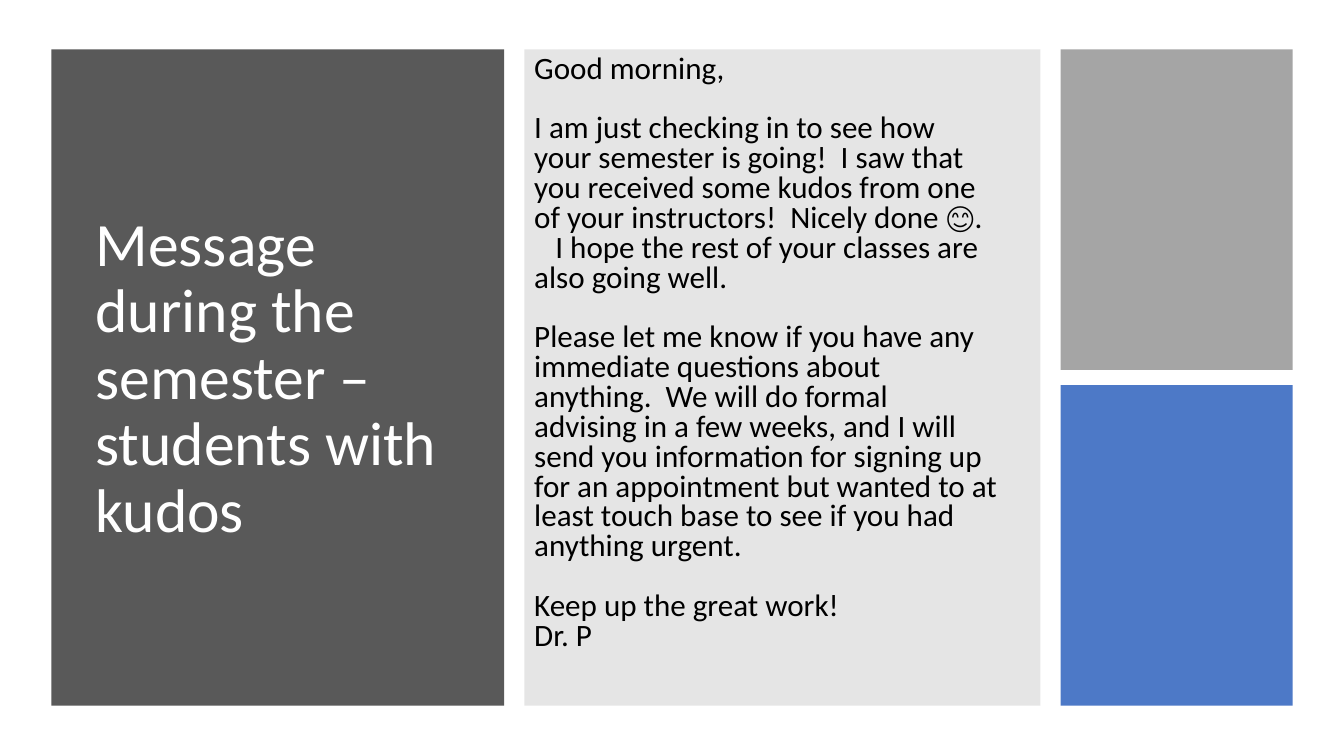
from dataclasses import dataclass
from itertools import accumulate

from lxml.etree import SubElement
from pptx import Presentation
from pptx.dml.color import RGBColor
from pptx.enum.shapes import MSO_SHAPE
from pptx.enum.text import MSO_ANCHOR
from pptx.oxml.ns import qn
from pptx.slide import Slide
from pptx.util import Inches, Pt


@dataclass(frozen=True)
class Theme:
    font: str = "Calibri"
    emoji_font: str = "Lato"
    dark: str = "595959"
    grey: str = "808080"
    silver: str = "A5A5A5"
    blue: str = "4472C4"
    white: str = "FFFFFF"
    black: str = "000000"
    title_size: float = 44
    body_size: float = 22.2
    blank_line: float = 21.35


@dataclass(frozen=True)
class Area:
    left: float
    top: float
    width: float
    height: float

    def emu(self) -> list[int]:
        return [Inches(n) for n in (self.left, self.top, self.width, self.height)]


@dataclass(frozen=True)
class Panel:
    column: int
    row: int
    row_span: int
    color: str
    opacity: int = 100


@dataclass(frozen=True)
class Paragraph:
    spans: tuple[str, ...]
    gap_before: float = 0
    indent: float = 0


@dataclass(frozen=True)
class TextBlock:
    area: Area
    paragraphs: tuple[Paragraph, ...]
    size: float
    color: str
    line_spacing: float
    anchor: MSO_ANCHOR


THEME = Theme()
EMOJI = "😊"

# Grid: three columns, two equal rows
LEFT, TOP, HEIGHT = 0.51, 0.49, 6.51
WIDTHS = (4.49, 5.12, 2.3)
COLUMN_GAP, ROW_GAP = 0.2, 0.15
ROW_HEIGHT = (HEIGHT - ROW_GAP) / 2
LEFTS = list(accumulate((width + COLUMN_GAP for width in WIDTHS), initial=LEFT))

PANELS = (
    Panel(0, 0, 2, THEME.dark),
    Panel(1, 0, 2, THEME.grey, 20),
    Panel(2, 0, 1, THEME.silver),
    Panel(2, 1, 1, THEME.blue, 95),
)

TEXTS = (
    TextBlock(
        Area(LEFT + 0.34, TOP + 0.34, 3.84, 5.87),
        (Paragraph(("Message during the semester – students with kudos",)),),
        THEME.title_size, THEME.white, 0.9, MSO_ANCHOR.MIDDLE,
    ),
    TextBlock(
        Area(LEFTS[1], TOP + 0.01, 4.79, 6.5),
        (
            Paragraph(("Good morning,",)),
            Paragraph(
                ("I am just checking in to see how your semester is going!  I saw that you "
                 "received some kudos from one of your instructors!  Nicely done ", EMOJI, "."),
                gap_before=THEME.blank_line,
            ),
            Paragraph(("I hope the rest of your classes are also going well.",), indent=0.21),
            Paragraph(
                ("Please let me know if you have any immediate questions about anything.  We will "
                 "do formal advising in a few weeks, and I will send you information for signing "
                 "up for an appointment but wanted to at least touch base to see if you had "
                 "anything urgent.",),
                gap_before=THEME.blank_line,
            ),
            Paragraph(("Keep up the great work!",), gap_before=THEME.blank_line),
            Paragraph(("Dr. P",)),
        ),
        THEME.body_size, THEME.black, 0.8, MSO_ANCHOR.TOP,
    ),
)


def apply_format(target: object, values: dict[str, object]) -> None:
    for name, value in values.items():
        setattr(target, name, value)


def draw_panel(page: Slide, panel: Panel) -> None:
    height = panel.row_span * ROW_HEIGHT + (panel.row_span - 1) * ROW_GAP
    area = Area(LEFTS[panel.column], TOP + panel.row * (ROW_HEIGHT + ROW_GAP),
                WIDTHS[panel.column], height)
    shape = page.shapes.add_shape(MSO_SHAPE.RECTANGLE, *area.emu())
    shape.shadow.inherit = False
    shape.line.fill.background()
    shape.fill.solid()
    shape.fill.fore_color.rgb = RGBColor.from_string(panel.color)
    if panel.opacity < 100:
        color = next(shape.element.spPr.iter(qn("a:srgbClr")))
        SubElement(color, qn("a:alpha"), val=str(panel.opacity * 1000))


def draw_text(page: Slide, block: TextBlock) -> None:
    frame = page.shapes.add_textbox(*block.area.emu()).text_frame
    apply_format(frame, {"word_wrap": True, "vertical_anchor": block.anchor})
    for index, paragraph in enumerate(block.paragraphs):
        para = frame.add_paragraph() if index else frame.paragraphs[0]
        apply_format(para, {
            "line_spacing": block.line_spacing,
            "space_before": Pt(paragraph.gap_before),
            "space_after": Pt(0),
        })
        if paragraph.indent:
            para._p.get_or_add_pPr().set("indent", str(Inches(paragraph.indent)))
        for text in paragraph.spans:
            span = para.add_run()
            span.text = text
            apply_format(span.font, {
                "name": THEME.emoji_font if text == EMOJI else THEME.font,
                "size": Pt(block.size),
            })
            span.font.color.rgb = RGBColor.from_string(block.color)


def main() -> None:
    deck = Presentation()
    apply_format(deck, {"slide_width": Inches(13.33), "slide_height": Inches(7.5)})
    page = deck.slides.add_slide(deck.slide_layouts[6])

    # Coloured panels behind the text
    for panel in PANELS:
        draw_panel(page, panel)

    # Title and message
    for block in TEXTS:
        draw_text(page, block)

    deck.save("out.pptx")


if __name__ == "__main__":
    main()
